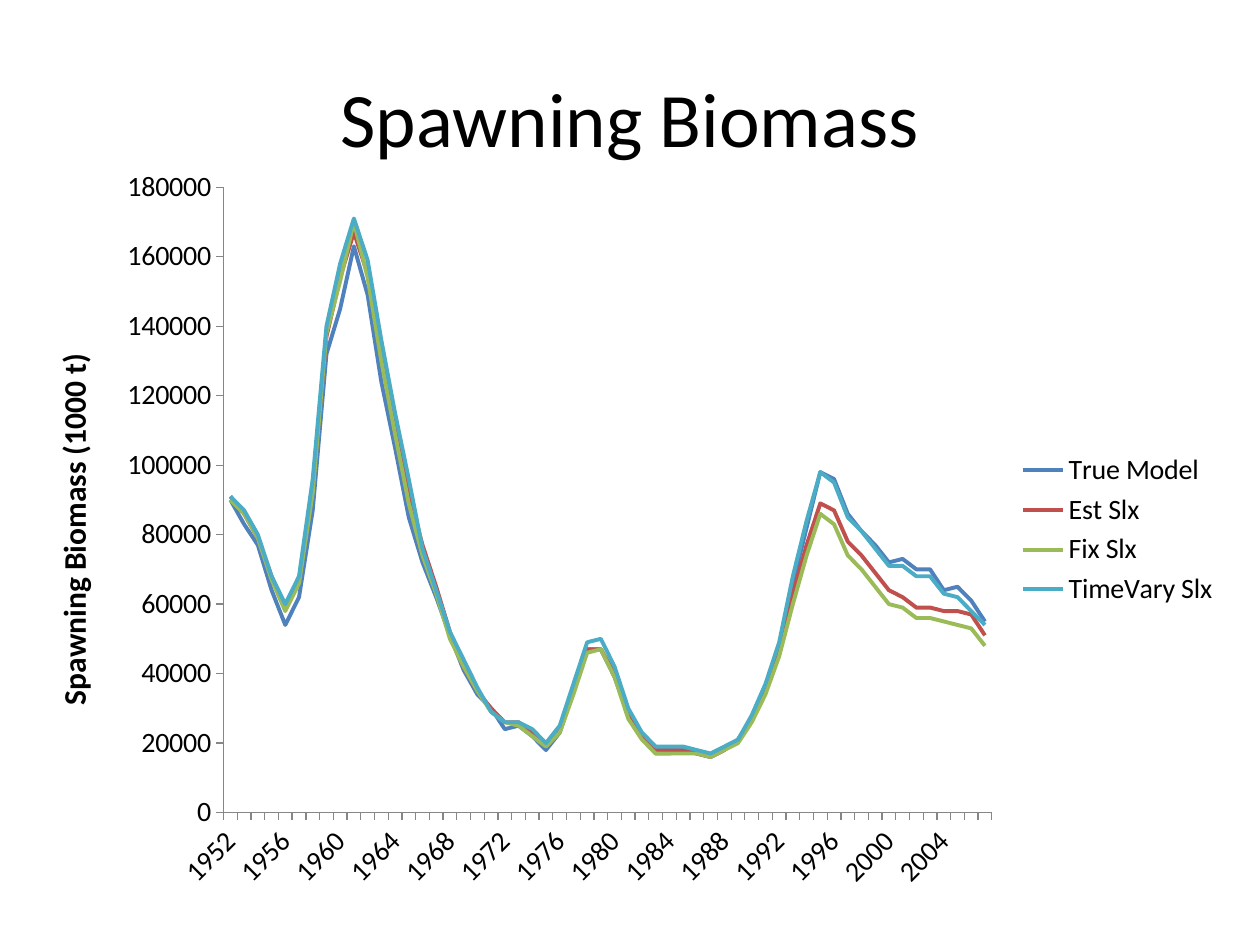
import pptx
import pptx.chart.data
import pptx.dml.color
import pptx.enum.chart
import pptx.enum.text
import pptx.oxml
import pptx.util
from pptx.util import Pt

FONT = "Calibri"
BLACK = "000000"
AXIS_GREY = "868686"
TITLE = "Spawning Biomass"
AXIS_TITLE = "Spawning Biomass (1000 t)"
YEARS = range(1952, 2008)
LABEL_STEP = 4

# name, colour, spawning biomass in thousands of axis units, one value a year
SERIES = [
    ("True Model", "4F81BD", [
        90, 83, 77, 64, 54, 62, 87, 132, 145, 163, 149, 124, 105, 85,
        72, 62, 51, 41, 34, 30, 24, 25, 22, 18, 23, 35, 47, 47,
        39, 28, 22, 17, 17, 18, 17, 16, 18, 21, 27, 36, 48, 66,
        82, 98, 96, 86, 81, 77, 72, 73, 70, 70, 64, 65, 61, 55]),
    ("Est Slx", "C0504D", [
        91, 86, 79, 68, 59, 67, 94, 137, 154, 167, 155, 132, 112, 92,
        77, 65, 52, 42, 35, 30, 26, 26, 23, 20, 24, 35, 47, 47,
        40, 28, 22, 18, 18, 18, 17, 16, 18, 21, 27, 35, 46, 63,
        77, 89, 87, 78, 74, 69, 64, 62, 59, 59, 58, 58, 57, 51]),
    ("Fix Slx", "9BBB59", [
        90, 86, 79, 67, 58, 66, 92, 138, 153, 170, 154, 130, 109, 89,
        74, 63, 50, 42, 35, 29, 26, 25, 22, 19, 23, 34, 46, 47,
        39, 27, 21, 17, 17, 17, 17, 16, 18, 20, 26, 34, 45, 60,
        74, 86, 83, 74, 70, 65, 60, 59, 56, 56, 55, 54, 53, 48]),
    ("TimeVary Slx", "4BACC6", [
        91, 87, 80, 68, 60, 68, 96, 140, 158, 171, 159, 136, 115, 96,
        76, 64, 52, 44, 36, 29, 26, 26, 24, 20, 25, 37, 49, 50,
        42, 30, 23, 19, 19, 19, 18, 17, 19, 21, 28, 37, 49, 68,
        84, 98, 95, 85, 81, 76, 71, 71, 68, 68, 63, 62, 58, 54]),
]


def color(value):
    return pptx.dml.color.RGBColor.from_string(value)


def set_font(font, size, bold=False):
    font.name = FONT
    font.size = Pt(size)
    font.bold = bold
    font.color.rgb = color(BLACK)


def write(frame, text, size, bold=False):
    """Put one centred line of text into a text frame."""
    para = frame.paragraphs[0]
    para.alignment = pptx.enum.text.PP_ALIGN.CENTER
    span = para.add_run()
    span.text = text
    set_font(span.font, size, bold)


def style_axis(axis):
    axis.has_major_gridlines = False
    axis.major_tick_mark = pptx.enum.chart.XL_TICK_MARK.OUTSIDE
    axis.minor_tick_mark = pptx.enum.chart.XL_TICK_MARK.NONE
    axis.format.line.color.rgb = color(AXIS_GREY)
    axis.format.line.width = Pt(0.75)
    set_font(axis.tick_labels.font, 16)


def chart_xml(tag, value):
    namespace = "http://schemas.openxmlformats.org/drawingml/2006/chart"
    return pptx.oxml.parse_xml(f'<c:{tag} xmlns:c="{namespace}" val="{value}"/>')


def place_plot(chart, left, top, width, height):
    """Fix the inner plot area, in fractions of the chart."""
    plot_area = chart._chartSpace.chart.plotArea
    for old in plot_area.xpath("c:layout"):
        plot_area.remove(old)
    layout = pptx.oxml.parse_xml(
        '<c:layout xmlns:c="http://schemas.openxmlformats.org/drawingml/2006/chart">'
        "<c:manualLayout/></c:layout>")
    settings = [("layoutTarget", "inner"), ("xMode", "edge"), ("yMode", "edge"),
                ("x", left), ("y", top), ("w", width), ("h", height)]
    for tag, value in settings:
        layout[0].append(chart_xml(tag, value))
    plot_area.insert(0, layout)


def add_biomass_chart(page):
    data = pptx.chart.data.CategoryChartData()
    data.categories = [str(year) for year in YEARS]
    for name, _, thousands in SERIES:
        data.add_series(name, [value * 1000 for value in thousands])
    chart = page.shapes.add_chart(
        pptx.enum.chart.XL_CHART_TYPE.LINE,
        Pt(18), Pt(90), Pt(686), Pt(425.5), data).chart
    set_font(chart.font, 10)
    chart.has_title = False
    chart.plots[0].vary_by_categories = False

    for line, (_, line_color, _) in zip(chart.plots[0].series, SERIES):
        line.smooth = False
        line.marker.style = pptx.enum.chart.XL_MARKER_STYLE.NONE
        line.format.line.color.rgb = color(line_color)
        line.format.line.width = Pt(2.25)

    years, biomass = chart.category_axis, chart.value_axis
    style_axis(years)
    style_axis(biomass)
    biomass.minimum_scale, biomass.maximum_scale = 0, 180000
    biomass.major_unit = 20000
    biomass.tick_labels.number_format = "0"
    biomass.tick_labels.number_format_is_linked = False
    write(biomass.axis_title.text_frame, AXIS_TITLE, 18, bold=True)
    biomass.axis_title.text_frame._txBody.bodyPr.set("rot", "-5400000")
    years._element.txPr.bodyPr.set("rot", "-2700000")
    no_multi_level = years._element.xpath("c:noMultiLvlLbl")[0]
    no_multi_level.addprevious(chart_xml("tickLblSkip", LABEL_STEP))
    no_multi_level.addprevious(chart_xml("tickMarkSkip", 1))

    chart.has_legend = True
    chart.legend.position = pptx.enum.chart.XL_LEGEND_POSITION.RIGHT
    chart.legend.include_in_layout = False
    set_font(chart.legend.font, 16)
    place_plot(chart, 0.16, 0.04, 0.64, 0.84)


def main():
    deck = pptx.Presentation()
    deck.slide_width, deck.slide_height = Pt(720), Pt(540)
    page = deck.slides.add_slide(deck.slide_layouts[6])
    box = page.shapes.add_textbox(Pt(36), Pt(21.6), Pt(648), Pt(90))
    box.text_frame.word_wrap = True
    box.text_frame.vertical_anchor = pptx.enum.text.MSO_ANCHOR.MIDDLE
    write(box.text_frame, TITLE, 44)
    add_biomass_chart(page)
    deck.save("out.pptx")


if __name__ == "__main__":
    main()
